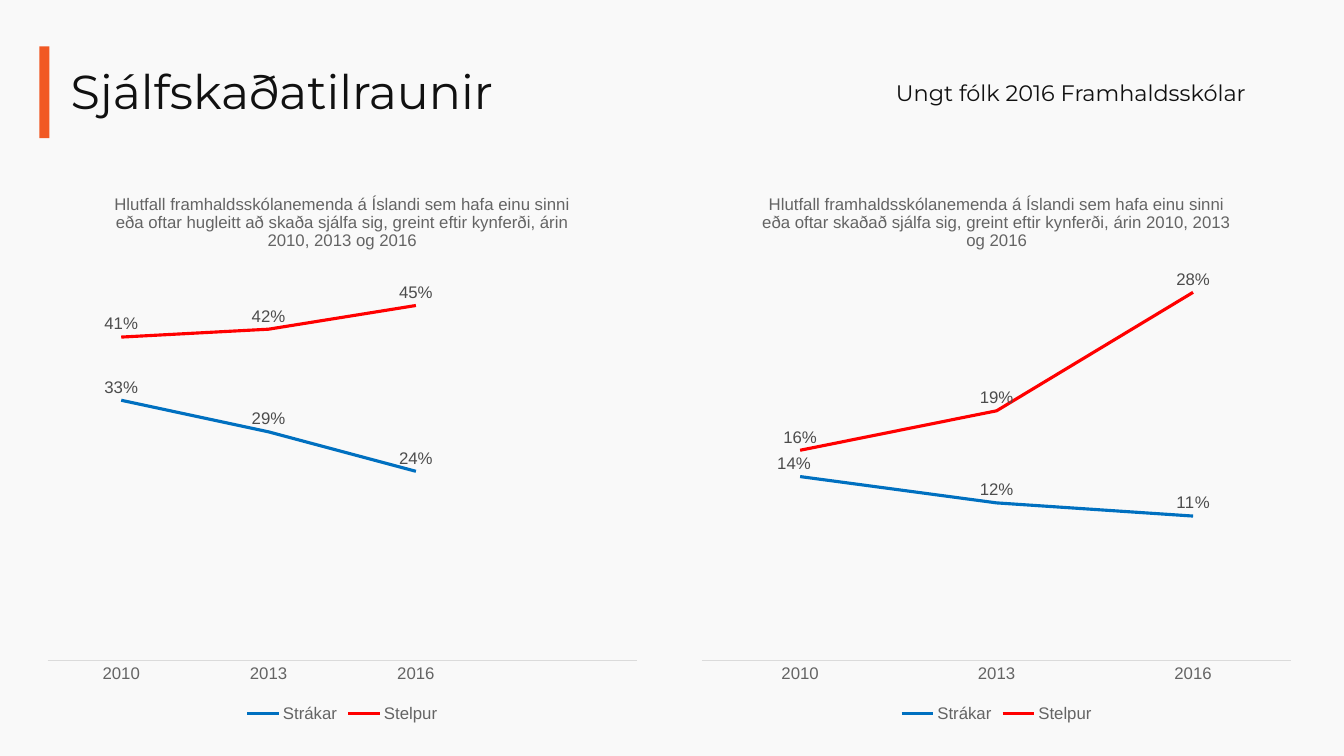
import pptx
import pptx.util
import pptx.chart.data
import pptx.dml.color
import pptx.enum.chart
import pptx.enum.shapes
import pptx.enum.text
import pptx.oxml
import pptx.oxml.ns

WIDE, HIGH = 13.33, 7.5
HUES = {"back": "F9F9F9", "bar": "F15924", "ink": "111111", "grey": "646464",
        "label": "4C4C4C", "axis": "DBDBDB", "Strákar": "0070C0", "Stelpur": "FF0000"}
HEAD = "Montserrat"
BODY = "Arial"
ASK = ("Hlutfall framhaldsskólanemenda á Íslandi sem hafa einu sinni eða oftar "
       "{} sjálfa sig, greint eftir kynferði, árin 2010, 2013 og 2016")
YEARS = ["2010", "2013", "2016"]
PLOTS = [
    {"ask": ASK.format("hugleitt að skaða"), "cats": YEARS + [""], "top": 0.5,
     "rows": {"Strákar": [0.33, 0.29, 0.24, None], "Stelpur": [0.41, 0.42, 0.45, None]},
     "shift": None},
    {"ask": ASK.format("skaðað"), "cats": YEARS, "top": 0.3,
     "rows": {"Strákar": [0.14, 0.12, 0.11], "Stelpur": [0.16, 0.19, 0.28]},
     "shift": ("Strákar", 0, -0.01, 0)},
]


def hue(name):
    return pptx.dml.color.RGBColor.from_string(HUES[name])


def style(font, size, color, face=BODY):
    font.size = pptx.util.Pt(size)
    font.name = face
    font.bold = False
    font.color.rgb = hue(color)


def write(frame, text, size=12, color="ink", face=BODY, space=None):
    frame.text = text
    part = frame.paragraphs[0]
    part.line_spacing = space
    style(part.runs[0].font, size, color, face)


def place(shape, box):
    shape.left, shape.top, shape.width, shape.height = map(pptx.util.Inches, box)


def layout(node, mark, **sizes):
    tags = "".join(f'<c:{key} val="{val}"/>' for key, val in sizes.items())
    item = pptx.oxml.parse_xml(
        f'<c:layout {pptx.oxml.ns.nsdecls("c")}><c:manualLayout>{tags}'
        '</c:manualLayout></c:layout>')
    for old in node.findall(pptx.oxml.ns.qn("c:layout")):
        node.remove(old)
    if mark is None:
        node.insert(0, item)
    else:
        node.find(pptx.oxml.ns.qn(mark)).addnext(item)


def header(slide, box):
    left, top, width, height = box
    bar = slide.shapes.add_shape(pptx.enum.shapes.MSO_SHAPE.RECTANGLE, 0, 0, 0, 0)
    place(bar, (left, top, 0.1, height))
    bar.shadow.inherit = False
    bar.fill.solid()
    bar.fill.fore_color.rgb = hue("bar")
    bar.line.fill.background()

    title = slide.shapes.title
    place(title, (left + 0.21, top - 0.06, width - 0.21, height + 0.15))
    frame = title.text_frame
    frame.vertical_anchor = pptx.enum.text.MSO_ANCHOR.MIDDLE
    write(frame, "Sjálfskaðatilraunir", size=34, face=HEAD, space=0.9)
    frame.paragraphs[0].alignment = pptx.enum.text.PP_ALIGN.LEFT

    note = slide.shapes.add_textbox(0, 0, 0, 0)
    place(note, (WIDE * 2 / 3, top + 0.33, WIDE * 0.3, 0.27))
    frame = note.text_frame
    frame.word_wrap = True
    frame.margin_left = frame.margin_right = frame.margin_top = frame.margin_bottom = 0
    write(frame, "Ungt fólk 2016 Framhaldsskólar", size=16, face=HEAD)


def trend(slide, box, plot):
    data = pptx.chart.data.CategoryChartData(number_format="0%")
    data.categories = plot["cats"]
    for name, vals in plot["rows"].items():
        data.add_series(name, vals)
    kind = pptx.enum.chart.XL_CHART_TYPE.LINE
    chart = slide.shapes.add_chart(kind, *map(pptx.util.Inches, box), data).chart
    style(chart.font, 10, "ink")
    chart.has_title = True
    write(chart.chart_title.text_frame, plot["ask"], color="grey")
    chart.has_legend = True
    chart.legend.position = pptx.enum.chart.XL_LEGEND_POSITION.BOTTOM
    chart.legend.include_in_layout = False
    style(chart.legend.font, 12, "grey")

    base = chart.category_axis
    base.major_tick_mark = pptx.enum.chart.XL_TICK_MARK.NONE
    base.format.line.color.rgb = hue("axis")
    base.format.line.width = pptx.util.Pt(0.75)
    style(base.tick_labels.font, 12, "grey")
    side = chart.value_axis
    side.minimum_scale, side.maximum_scale = 0, plot["top"]
    side.has_major_gridlines = False
    side.visible = False

    spot = pptx.enum.chart.XL_LABEL_POSITION.ABOVE
    for line in chart.plots[0].series:
        line.smooth = False
        line.marker.style = pptx.enum.chart.XL_MARKER_STYLE.NONE
        line.format.line.color.rgb = hue(line.name)
        line.format.line.width = pptx.util.Pt(2.25)
        tags = line.data_labels
        tags.show_value = True
        tags.number_format = "0%"
        tags.number_format_is_linked = False
        tags.position = spot
        style(tags.font, 12, "label")
        if plot["shift"] and plot["shift"][0] == line.name:
            _, point, dx, dy = plot["shift"]
            tag = line.points[point].data_label
            style(tag.font, 12, "label")
            tag.position = spot
            node = tags._element.find(pptx.oxml.ns.qn("c:dLbl"))
            layout(node, "c:idx", x=dx, y=dy)

    area = chart._chartSpace.chart.plotArea
    layout(area, None, layoutTarget="inner", xMode="edge", yMode="edge",
           x=0.02, y=0.166, w=0.96, h=0.715)


def main():
    deck = pptx.Presentation()
    deck.slide_width = pptx.util.Inches(WIDE)
    deck.slide_height = pptx.util.Inches(HIGH)
    slide = deck.slides.add_slide(deck.slide_layouts[5])
    slide.background.fill.solid()
    slide.background.fill.fore_color.rgb = hue("back")
    header(slide, (0.39, 0.46, 12.55, 0.91))
    wide, gap = 6.09, 0.4
    for col, plot in enumerate(PLOTS):
        trend(slide, (0.35 + col * (wide + gap), 1.73, wide, 5.48), plot)
    deck.save("out.pptx")


if __name__ == "__main__":
    main()
